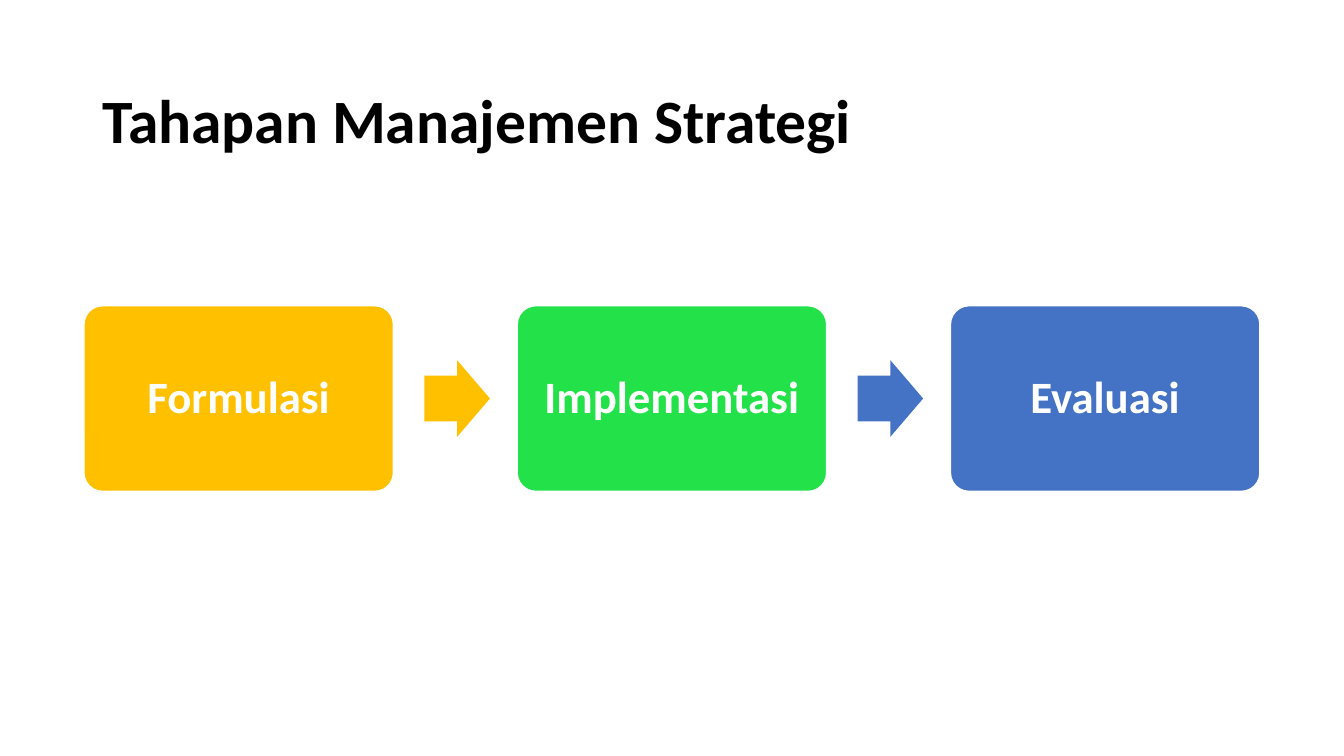
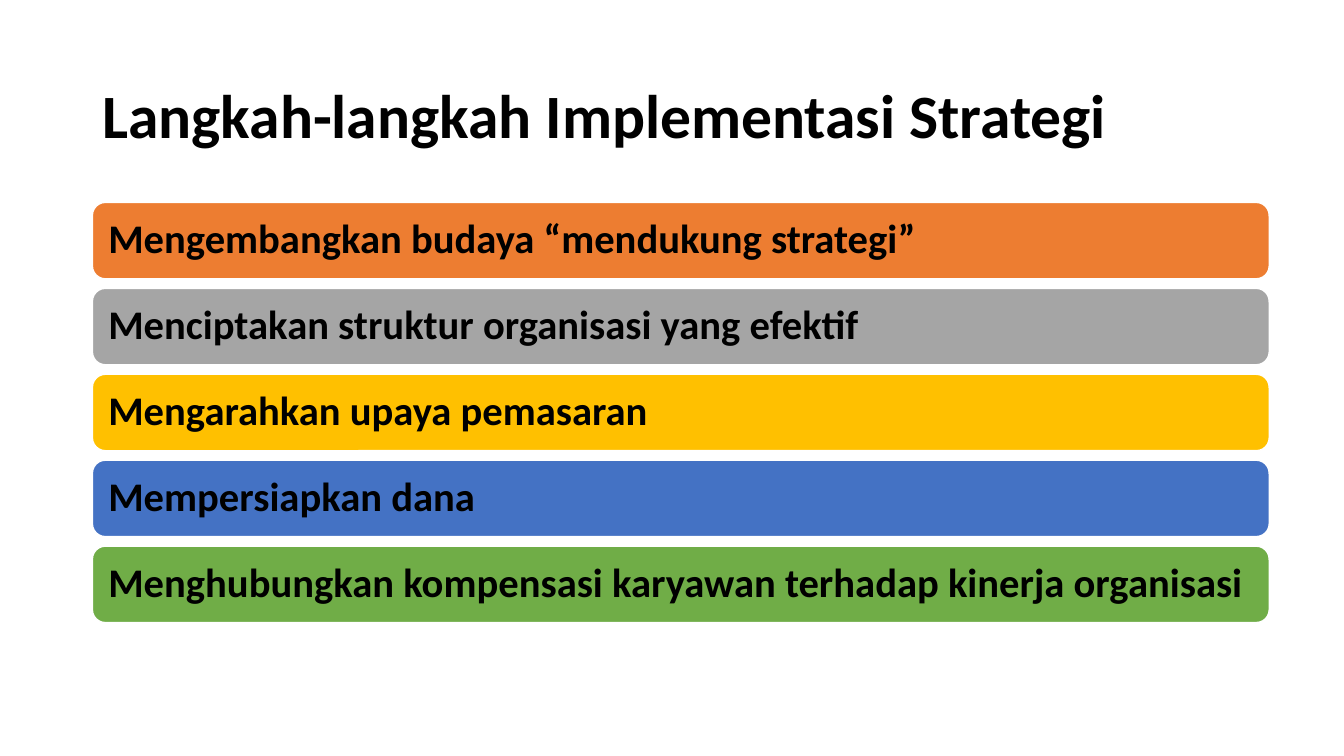
import pptx
import pptx.dml.color
import pptx.enum.shapes
import pptx.enum.text
import pptx.util

SHAPE = pptx.enum.shapes.MSO_SHAPE
ALIGN = pptx.enum.text.PP_ALIGN
COLUMNS, ROWS = 160, 90
GRID_UNIT = pptx.util.Pt(6)

BLACK, WHITE = "000000", "FFFFFF"
ORANGE, GRAY, GOLD = "ED7D31", "A5A5A5", "FFC000"
BLUE, GREEN, BRIGHT_GREEN = "4472C4", "70AD47", "23E148"


def color(hex_value):
    return pptx.dml.color.RGBColor.from_string(hex_value)


def grid(*units):
    return [round(unit * GRID_UNIT) for unit in units]


class Deck:
    font_name = "Calibri"
    title_size = 44
    margin = 11

    def __init__(self):
        self.presentation = pptx.Presentation()
        self.presentation.slide_width, self.presentation.slide_height = grid(COLUMNS, ROWS)
        self.slide = None

    def new_slide(self, title, title_rows):
        self.slide = self.presentation.slides.add_slide(self.presentation.slide_layouts[6])
        heading = self.slide.shapes.add_textbox(*grid(self.margin, 6, 138, title_rows))
        self.set_label(heading, title, self.title_size, BLACK)

    def set_label(self, holder, text, size, text_color, align=ALIGN.LEFT, inset=None):
        frame = holder.text_frame
        frame.text = text
        frame.word_wrap = True
        frame.vertical_anchor = pptx.enum.text.MSO_ANCHOR.MIDDLE
        if inset is not None:
            margin = pptx.util.Inches(inset)
            frame.margin_left = frame.margin_right = margin
            frame.margin_top = frame.margin_bottom = margin
        paragraph = frame.paragraphs[0]
        paragraph.alignment = align
        paragraph.line_spacing = 0.9
        font = paragraph.runs[0].font
        font.name = self.font_name
        font.size = pptx.util.Pt(size)
        font.bold = True
        font.color.rgb = color(text_color)

    def solid(self, kind, area, fill, adjustments):
        shape = self.slide.shapes.add_shape(kind, *grid(*area))
        shape.shadow.inherit = False
        shape.fill.solid()
        shape.fill.fore_color.rgb = color(fill)
        for index, value in enumerate(adjustments):
            shape.adjustments[index] = value
        return shape

    def card(self, area, fill, corner=0.17):
        card = self.solid(SHAPE.ROUNDED_RECTANGLE, area, fill, [corner])
        card.line.color.rgb = color(WHITE)
        card.line.width = pptx.util.Pt(1)
        return card

    def stage(self, area, text, fill):
        card = self.card(area, fill, corner=0.1)
        self.set_label(card, text, 32, WHITE, ALIGN.CENTER, 0.13)

    def step(self, area, text, fill):
        self.set_label(self.card(area, fill), text, 29, BLACK, inset=0.12)

    def arrow(self, area, fill):
        self.solid(SHAPE.RIGHT_ARROW, area, fill, [0.6, 0.5]).line.fill.background()


def add_stages(deck):
    deck.new_slide("Tahapan Manajemen Strategi", 17.4)
    stages = [("Formulasi", GOLD), ("Implementasi", BRIGHT_GREEN), ("Evaluasi", BLUE)]
    arrow_fills = [GOLD, BLUE]
    left, top, width, height = 10, 36.4, 36.84, 22.1
    pitch = 1.4 * width
    arrow_width, arrow_height = 7.8, 9.12
    arrow_left = left + 1.1 * width
    arrow_top = top + (height - arrow_height) / 2
    for index, (name, fill) in enumerate(stages):
        deck.stage((left + index * pitch, top, width, height), name, fill)
    for index, fill in enumerate(arrow_fills):
        deck.arrow((arrow_left + index * pitch, arrow_top, arrow_width, arrow_height), fill)


def add_steps(deck):
    deck.new_slide("Langkah-langkah Implementasi Strategi", 16.2)
    steps = [
        ("Mengembangkan budaya “mendukung strategi”", ORANGE),
        ("Menciptakan struktur organisasi yang efektif", GRAY),
        ("Mengarahkan upaya pemasaran", GOLD),
        ("Mempersiapkan dana", BLUE),
        ("Menghubungkan kompensasi karyawan terhadap kinerja organisasi", GREEN),
    ]
    top, pitch, width, height = 24.1, 10.23, 140.1, 9.1
    for index, (text, fill) in enumerate(steps):
        deck.step((deck.margin, top + index * pitch, width, height), text, fill)


def main():
    deck = Deck()
    add_stages(deck)
    add_steps(deck)
    deck.presentation.save("out.pptx")


if __name__ == "__main__":
    main()
